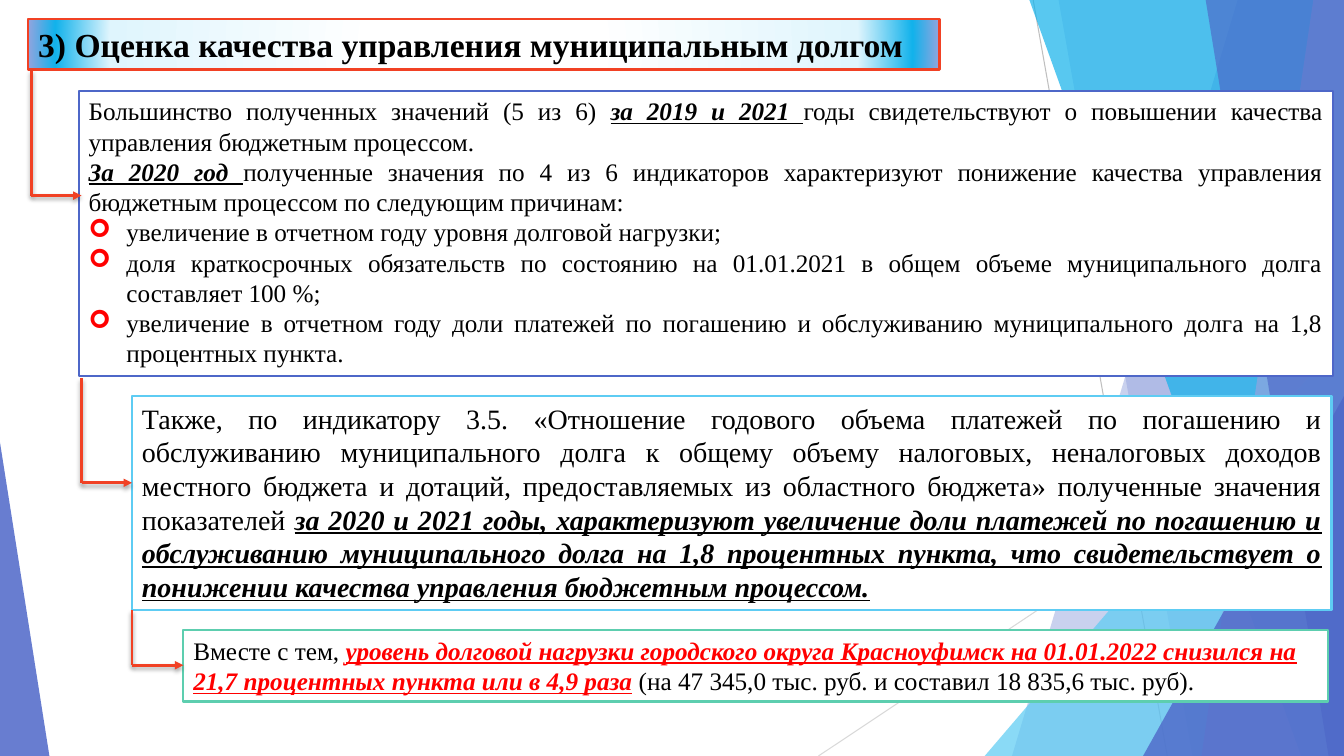
from dataclasses import dataclass
from typing import NamedTuple

from lxml import etree
from pptx import Presentation
from pptx.dml.color import RGBColor
from pptx.enum.shapes import MSO_CONNECTOR, MSO_SHAPE
from pptx.enum.text import MSO_AUTO_SIZE as AutoSize, PP_ALIGN as Align
from pptx.oxml import parse_xml
from pptx.oxml.ns import nsdecls, qn
from pptx.util import Pt

BLACK = RGBColor(0x00, 0x00, 0x00)
WHITE = RGBColor(0xFF, 0xFF, 0xFF)
RED = RGBColor(0xFF, 0x00, 0x00)
ORANGE = RGBColor(0xF1, 0x41, 0x24)
INDIGO = RGBColor(0x4E, 0x67, 0xC8)
LAVENDER = RGBColor(0x95, 0xA4, 0xDE)
SKY = RGBColor(0x5E, 0xCC, 0xF3)
PALE_SKY = RGBColor(0xDF, 0xF5, 0xFD)
AZURE = RGBColor(0x12, 0xB2, 0xEB)
MINT = RGBColor(0x5D, 0xCE, 0xAF)
GREY = RGBColor(0xBF, 0xBF, 0xBF)
LIGHT_GREY = RGBColor(0xD9, 0xD9, 0xD9)

FONT = "Times New Roman"
WIDTH, HEIGHT = 960, 540
BULLET_INDENT = 27
TITLE_STOPS = ((24, WHITE), (82, PALE_SKY), (94, AZURE), (100, LAVENDER))


class Facet(NamedTuple):
    top_left: float
    bottom_left: float
    bottom_right: float
    color: RGBColor
    opacity: int


class Corner(NamedTuple):
    left: float
    top: float
    width: float
    apex: float
    color: RGBColor
    opacity: int


class Span(NamedTuple):
    text: str
    strong: bool = False
    color: RGBColor = BLACK
    bold: bool = False


class Para(NamedTuple):
    spans: tuple[Span, ...]
    align: Align = Align.JUSTIFY
    bullet: bool = False


@dataclass
class Box:
    left: float
    top: float
    width: float
    height: float
    border: RGBColor
    size: float
    paras: tuple[Para, ...]


class Elbow(NamedTuple):
    left: float
    top: float
    right: float
    bottom: float


RIBBONS = (
    Facet(884.2, 722.9, WIDTH, INDIGO, 30),
    Facet(756, 851.8, WIDTH, INDIGO, 20),
    Corner(703.4, 239.8, 256.6, 1, SKY, 72),
    Facet(735.1, 929.5, WIDTH, AZURE, 70),
    Facet(938.2, 858.2, WIDTH, LAVENDER, 70),
    Facet(861.1, 949, WIDTH, INDIGO, 65),
    Corner(816.5, 283, 143.5, 1, INDIGO, 80),
    Corner(0, 316.1, 35.3, 0, INDIGO, 85),
)

TITLE = Box(20.2, 13.7, 650.9, 36, ORANGE, 24, (
    Para((Span("3) Оценка качества управления муниципальным долгом", bold=True),), Align.LEFT),
))

FINDINGS = (
    Box(94.3, 283, 856.8, 152.6, SKY, 20, (
        Para((
            Span("Также, по индикатору 3.5. «Отношение годового объема платежей по погашению и "
                 "обслуживанию муниципального долга к общему объему налоговых, неналоговых доходов "
                 "местного бюджета и дотаций, предоставляемых из областного бюджета» полученные "
                 "значения показателей "),
            Span("за 2020 и 2021 годы, характеризуют увеличение доли платежей по погашению и "
                 "обслуживанию муниципального долга на 1,8 процентных пункта, что свидетельствует "
                 "о понижении качества управления бюджетным процессом.", True),
        )),
    )),
    Box(56.2, 64.8, 895.7, 203.8, INDIGO, 18, (
        Para((
            Span("Большинство полученных значений (5 из 6) "),
            Span("за 2019 и 2021 ", True),
            Span("годы свидетельствуют о повышении качества управления бюджетным процессом. "),
        )),
        Para((
            Span("За 2020 год ", True),
            Span("полученные значения по 4 из 6 индикаторов характеризуют понижение качества "
                 "управления бюджетным процессом по следующим причинам:"),
        )),
        Para((Span("увеличение в отчетном году уровня долговой нагрузки;"),), bullet=True),
        Para((Span("доля краткосрочных обязательств по состоянию на 01.01.2021 в общем объеме "
                   "муниципального долга составляет 100 %;"),), bullet=True),
        Para((Span("увеличение в отчетном году доли платежей по погашению и обслуживанию "
                   "муниципального долга на 1,8 процентных пункта."),), bullet=True),
    )),
    Box(131, 450, 817.9, 51.1, MINT, 18, (
        Para((
            Span("Вместе с тем, "),
            Span("уровень долговой нагрузки городского округа Красноуфимск на 01.01.2022 снизился "
                 "на 21,7 процентных пункта или в 4,9 раза", True, RED),
            Span(" (на 47 345,0 тыс. руб. и составил 18 835,6 тыс. руб)."),
        ), Align.LEFT),
    )),
)

ELBOWS = (
    Elbow(22.5, 50.4, 58.3, 139.7),
    Elbow(58.3, 270, 94.3, 344.9),
    Elbow(94.3, 435.6, 131, 475.2),
)


def add_line(slide, start, end, color: RGBColor, width: float):
    line = slide.shapes.add_connector(MSO_CONNECTOR.STRAIGHT, *map(Pt, start + end))
    line.line.color.rgb = color
    line.line.width = Pt(width)
    effects = etree.SubElement(line.element.spPr, qn("a:effectLst"))
    return line, effects


def add_ribbon(slide, ribbon: Facet | Corner) -> None:
    if isinstance(ribbon, Corner):
        shape = slide.shapes.add_shape(
            MSO_SHAPE.ISOSCELES_TRIANGLE, Pt(ribbon.left), Pt(ribbon.top),
            Pt(ribbon.width), Pt(HEIGHT - ribbon.top))
        shape.adjustments[0] = ribbon.apex
    else:
        outline = slide.shapes.build_freeform(Pt(ribbon.top_left), Pt(-0.6))
        corners = ((WIDTH, -0.6), (ribbon.bottom_right, HEIGHT), (ribbon.bottom_left, HEIGHT))
        if ribbon.bottom_left > ribbon.top_left or ribbon.bottom_right == WIDTH:
            outline.add_line_segments([(Pt(x), Pt(y)) for x, y in corners])
        shape = outline.convert_to_shape()
    shape.shadow.inherit = False
    shape.line.fill.background()
    shape.fill.solid()
    shape.fill.fore_color.rgb = ribbon.color
    color = shape.element.spPr.find(f"{qn('a:solidFill')}/{qn('a:srgbClr')}")
    etree.SubElement(color, qn("a:alpha"), val=str(ribbon.opacity * 1000))


def add_box(slide, box: Box):
    shape = slide.shapes.add_textbox(*map(Pt, (box.left, box.top, box.width, box.height)))
    shape.fill.solid()
    shape.fill.fore_color.rgb = WHITE
    shape.line.color.rgb = box.border
    shape.line.width = Pt(1.5)
    frame = shape.text_frame
    frame.word_wrap = True
    frame.auto_size = AutoSize.SHAPE_TO_FIT_TEXT
    for index, para in enumerate(box.paras):
        paragraph = frame.add_paragraph() if index else frame.paragraphs[0]
        paragraph.alignment = para.align
        if para.bullet:
            add_bullet(paragraph)
        for span in para.spans:
            run = paragraph.add_run()
            run.text = span.text
            run.font.name = FONT
            run.font.size = Pt(box.size)
            run.font.color.rgb = span.color
            run.font.bold = span.strong or span.bold
            run.font.italic = run.font.underline = span.strong
    return shape


def add_bullet(paragraph) -> None:
    props = paragraph._p.get_or_add_pPr()
    props.set("marL", str(Pt(BULLET_INDENT)))
    props.set("indent", str(-Pt(BULLET_INDENT)))
    color = etree.SubElement(props, qn("a:buClr"))
    etree.SubElement(color, qn("a:srgbClr"), val=str(RED))
    etree.SubElement(props, qn("a:buFont"), typeface="Wingdings")
    etree.SubElement(props, qn("a:buChar"), char="➢")


def set_radial_fill(shape) -> None:
    stops = "".join(f'<a:gs pos="{pos * 1000}"><a:srgbClr val="{color}"/></a:gs>'
                    for pos, color in TITLE_STOPS)
    gradient = parse_xml(
        f'<a:gradFill {nsdecls("a")} rotWithShape="1"><a:gsLst>{stops}</a:gsLst>'
        '<a:path path="circle"><a:fillToRect l="50000" t="50000" r="50000" b="50000"/></a:path>'
        '</a:gradFill>')
    props = shape.element.spPr
    props.replace(props.find(qn("a:solidFill")), gradient)


def add_elbow(slide, elbow: Elbow) -> None:
    bend = (elbow.left, elbow.bottom)
    legs = (((elbow.left, elbow.top), bend), (bend, (elbow.right, elbow.bottom)))
    for start, end in legs:
        line, effects = add_line(slide, start, end, ORANGE, 2)
        shadow = etree.SubElement(effects, qn("a:outerShdw"), blurRad=str(Pt(3)),
                                  dist=str(Pt(2)), dir="5400000", rotWithShape="0")
        color = etree.SubElement(shadow, qn("a:srgbClr"), val=str(BLACK))
        etree.SubElement(color, qn("a:alpha"), val="35000")
    etree.SubElement(line.line._get_or_add_ln(), qn("a:tailEnd"), type="triangle")


def main() -> None:
    deck = Presentation()
    deck.slide_width, deck.slide_height = Pt(WIDTH), Pt(HEIGHT)
    slide = deck.slides.add_slide(deck.slide_layouts[6])
    add_line(slide, (738, 0), (833.8, HEIGHT), GREY, 0.75)
    add_line(slide, (WIDTH, 290.2), (584.6, HEIGHT), LIGHT_GREY, 0.75)
    for ribbon in RIBBONS:
        add_ribbon(slide, ribbon)
    set_radial_fill(add_box(slide, TITLE))
    for finding in FINDINGS:
        add_box(slide, finding)
    for elbow in ELBOWS:
        add_elbow(slide, elbow)
    deck.save("out.pptx")


if __name__ == "__main__":
    main()
